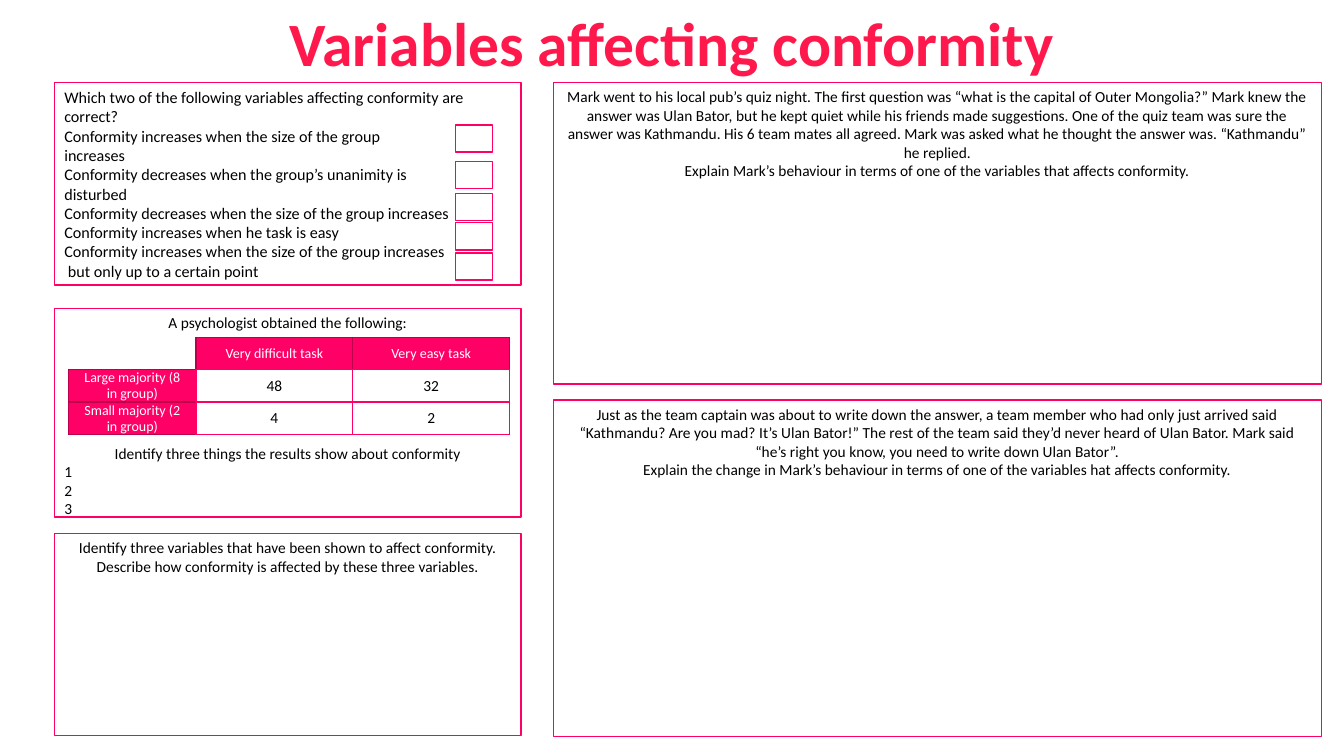
from pptx import Presentation
from pptx.dml.color import RGBColor
from pptx.enum.shapes import MSO_SHAPE
from pptx.enum.text import MSO_ANCHOR, PP_ALIGN
from pptx.util import Pt
from lxml.etree import SubElement
from pptx.oxml.ns import qn

PINK, DARK, RED = "FF0066", "BD004B", "FF184B"
WHITE, BLACK = "FFFFFF", "000000"
LEFT, CENTER = PP_ALIGN.LEFT, PP_ALIGN.CENTER

CHOICES = [
    "Which two of the following variables affecting conformity are correct?",
    "Conformity increases when the size of the group",
    "increases",
    "Conformity decreases when the group’s unanimity is",
    "disturbed",
    "Conformity decreases when the size of the group increases",
    "Conformity increases when he task is easy",
    "Conformity increases when the size of the group increases",
    " but only up to a certain point",
]
QUIZ = [
    "Mark went to his local pub’s quiz night. The first question was “what is the capital of "
    "Outer Mongolia?” Mark knew the answer was Ulan Bator, but he kept quiet while his friends "
    "made suggestions. One of the quiz team was sure the answer was Kathmandu. His 6 team mates "
    "all agreed. Mark was asked what he thought the answer was. “Kathmandu” he replied.",
    "Explain Mark’s behaviour in terms of one of the variables that affects conformity.",
]
CHANGE = [
    "Just as the team captain was about to write down the answer, a team member who had only "
    "just arrived said “Kathmandu? Are you mad? It’s Ulan Bator!” The rest of the team said "
    "they’d never heard of Ulan Bator. Mark said “he’s right you know, you need to write down "
    "Ulan Bator”.",
    "Explain the change in Mark’s behaviour in terms of one of the variables hat affects "
    "conformity.",
]
STUDY = [
    "A psychologist obtained the following:",
    "Identify three things the results show about conformity",
    "1", "2", "3",
]
RECALL = [
    "Identify three variables that have been shown to affect conformity. "
    "Describe how conformity is affected by these three variables.",
]
RESULTS = [
    ["", "Very difficult task", "Very easy task"],
    ["Large majority (8 in group)", "48", "32"],
    ["Small majority (2 in group)", "4", "2"],
]


def color(code):
    return RGBColor.from_string(code)


def write(frame, lines, size, tint=BLACK, align=CENTER, bold=False):
    frame.text = "\n".join(lines)
    frame.word_wrap = True
    for para in frame.paragraphs:
        para.alignment = align
        for run in para.runs:
            font = run.font
            font.name, font.size, font.bold = "Calibri", Pt(size), bold
            font.color.rgb = color(tint)


def add_box(slide, left, top, width, height):
    box = slide.shapes.add_shape(
        MSO_SHAPE.RECTANGLE, Pt(left), Pt(top), Pt(width), Pt(height))
    box.shadow.inherit = False
    box.fill.solid()
    box.fill.fore_color.rgb = color(WHITE)
    box.line.color.rgb = color(PINK)
    box.line.width = Pt(1)
    return box


def add_panel(slide, place, lines, size=11, align=CENTER, anchor=MSO_ANCHOR.TOP):
    frame = add_box(slide, *place).text_frame
    write(frame, lines, size, align=align)
    frame.vertical_anchor = anchor
    return frame


def add_title(slide, text):
    frame = slide.shapes.add_textbox(0, 0, Pt(960), Pt(60.5)).text_frame
    write(frame, [text], 44, RED, bold=True)


def edge_cell(cell, tint):
    props = cell._tc.get_or_add_tcPr()
    for side in ("a:lnL", "a:lnR", "a:lnT", "a:lnB"):
        line = SubElement(props, qn(side), w=str(Pt(1)))
        fill = SubElement(line, qn("a:solidFill"))
        SubElement(fill, qn("a:srgbClr"), val=tint)


def add_results(slide):
    widths, heights = [91, 112, 112], [22.8, 23.4, 23.4]
    table = slide.shapes.add_table(
        3, 3, Pt(49), Pt(241), Pt(sum(widths)), Pt(sum(heights))).table
    table.first_row = table.horz_banding = False
    for col, width in zip(table.columns, widths):
        col.width = Pt(width)
    for row, height in zip(table.rows, heights):
        row.height = Pt(height)
    for r, texts in enumerate(RESULTS):
        for c, text in enumerate(texts):
            cell = table.cell(r, c)
            cell.margin_top = cell.margin_bottom = 0
            cell.vertical_anchor = MSO_ANCHOR.MIDDLE
            if not text:
                cell.fill.background()
                continue
            head = r == 0 or c == 0
            edge_cell(cell, DARK if head else PINK)
            cell.fill.solid()
            cell.fill.fore_color.rgb = color(PINK if head else WHITE)
            write(cell.text_frame, [text], 10 if head else 11, WHITE if head else BLACK)
            cell.text_frame.paragraphs[0].line_spacing = 0.95


def main():
    deck = Presentation()
    deck.slide_width, deck.slide_height = Pt(960), Pt(540)
    slide = deck.slides.add_slide(deck.slide_layouts[6])
    near, slim = 38.9, 333.4
    far, wide = 395.3, 548.6

    # Question panels
    add_panel(slide, (near, 59, slim, 144.7), CHOICES, 11.5, LEFT, MSO_ANCHOR.MIDDLE)
    add_panel(slide, (far, 285.8, wide, 240.5), CHANGE)
    add_panel(slide, (far, 59, wide, 215.3), QUIZ)
    study = add_panel(slide, (near, 220.3, slim, 149), STUDY)
    add_panel(slide, (near, 380.9, slim, 144.7), RECALL)

    # Room for the table, then numbered answers at the left
    study.paragraphs[1].space_before = Pt(80)
    for para in study.paragraphs[2:]:
        para.alignment = LEFT

    # Tick boxes beside the choices
    for top in (89.3, 115.2, 138.2, 159.1, 180.7):
        add_box(slide, 325.4, top, 26.6, 19.4)

    # Results table and title
    add_results(slide)
    add_title(slide, "Variables affecting conformity")
    deck.save("out.pptx")


if __name__ == "__main__":
    main()
